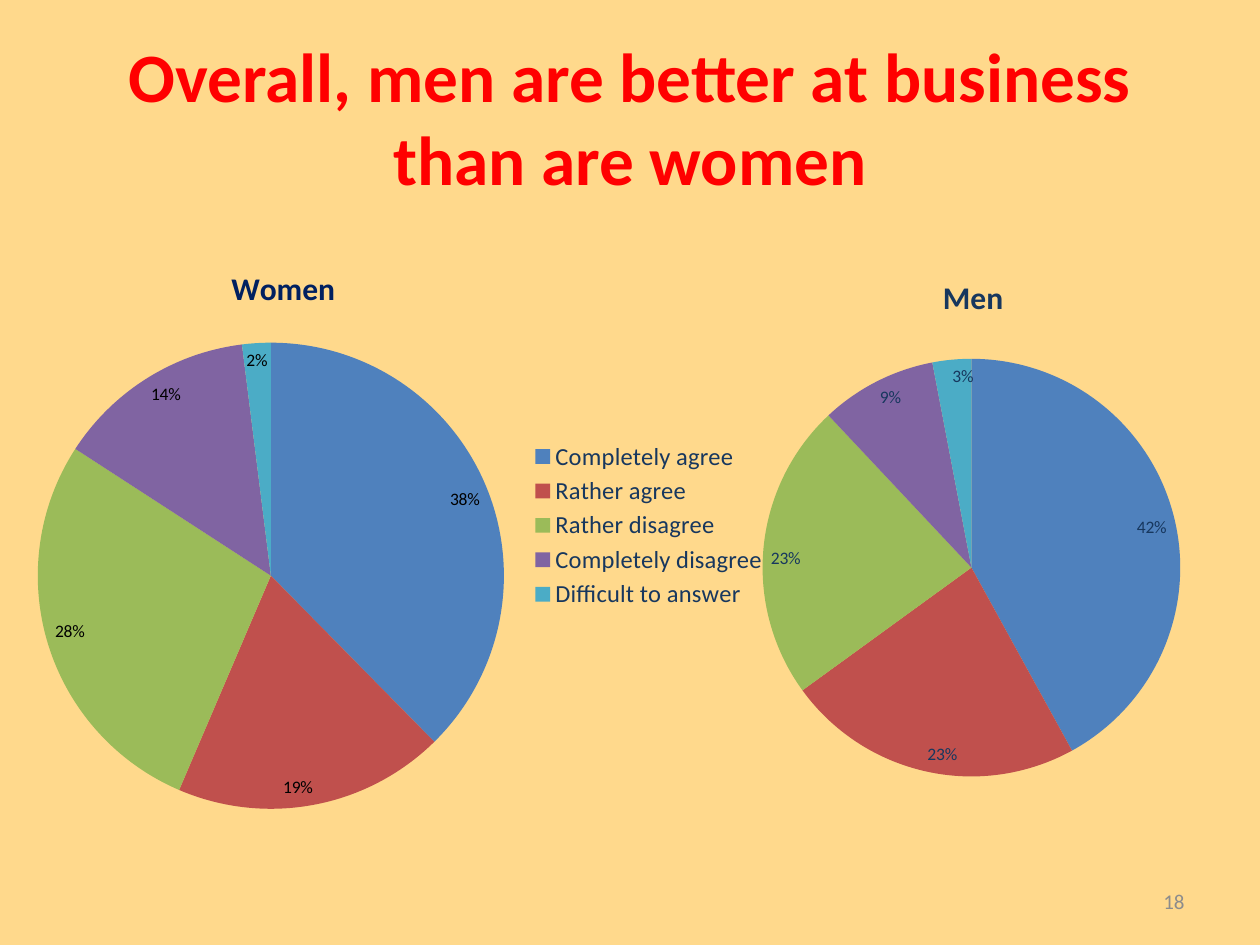
"""Build a slide that compares the answers of women and men in two pie charts."""
from dataclasses import dataclass

from lxml import etree
from pptx import Presentation
from pptx import util as u
from pptx.chart import data as chart_data
from pptx.dml import color
from pptx.enum import chart as kinds, text
from pptx.oxml import ns


@dataclass(frozen=True)
class Theme:
    """Colours, font and type sizes of the slide."""
    font: str = "Calibri"
    background: str = "FFD98C"
    heading: str = "FF0000"
    navy: str = "002060"
    ink: str = "17375E"
    black: str = "000000"
    muted: str = "8C8C8C"
    slices: tuple = ("4F81BD", "C0504D", "9BBB59", "8064A2", "4BACC6")
    heading_size: float = 39.6
    chart_title_size: int = 18
    legend_size: int = 14
    number_size: int = 12
    label_size: int = 10


THEME = Theme()
ANSWERS = ["Completely agree", "Rather agree", "Rather disagree",
           "Completely disagree", "Difficult to answer"]
PIES = [
    {"name": "Women", "place": (0.17, 1.67, 6, 5), "answers": ANSWERS,
     "values": (0.38, 0.19, 0.28, 0.14, 0.02),
     "title_color": THEME.navy, "label_color": THEME.black,
     "title_at": {"x": 0.27, "y": 0.08},
     "plot_at": {"x": 0.02, "y": 0.21, "w": 0.62, "h": 0.74},
     "legend_at": {"x": 0.67, "y": 0.36, "w": 0.32, "h": 0.28}},
    {"name": "Men", "place": (5, 1.92, 5.42, 4.42), "answers": list("12345"),
     "values": (0.42, 0.23, 0.23, 0.09, 0.03),
     "title_color": THEME.ink, "label_color": THEME.ink,
     "title_at": {"x": 0.45, "y": 0.05},
     "plot_at": {"x": 0.19, "y": 0.21, "w": 0.62, "h": 0.75}},
]


def inches(values):
    """Turn numbers into lengths."""
    return [u.Inches(value) for value in values]


def format_font(font, size, fill, bold=False):
    """Set the face, size, weight and colour of a font."""
    values = {"name": THEME.font, "size": u.Pt(size), "bold": bold}
    for name, value in values.items():
        setattr(font, name, value)
    font.color.rgb = color.RGBColor.from_string(fill)


def write_text(box, wording, align, size, fill, bold=False):
    """Fill a box with one formatted paragraph."""
    frame = box.text_frame
    values = {"word_wrap": True, "auto_size": text.MSO_AUTO_SIZE.NONE,
              "vertical_anchor": text.MSO_ANCHOR.MIDDLE}
    for name, value in values.items():
        setattr(frame, name, value)
    para = frame.paragraphs[0]
    para.alignment = align
    span = para.add_run()
    span.text = wording
    format_font(span.font, size, fill, bold)


def place_part(part, index, fractions, inner=False):
    """Give a chart part a manual layout in fractions of the chart."""
    for old in part.findall(ns.qn("c:layout")):
        part.remove(old)
    layout = etree.Element(ns.qn("c:layout"))
    manual = etree.SubElement(layout, ns.qn("c:manualLayout"))
    settings = [("layoutTarget", "inner")] if inner else []
    settings += [("xMode", "edge"), ("yMode", "edge"), *fractions.items()]
    for name, value in settings:
        etree.SubElement(manual, ns.qn(f"c:{name}")).set("val", str(value))
    part.insert(index, layout)


def add_chart_title(chart, pie):
    """Add the bold title of a pie."""
    chart.has_title = True
    para = chart.chart_title.text_frame.paragraphs[0]
    span = para.add_run()
    span.text = pie["name"]
    format_font(span.font, THEME.chart_title_size, pie["title_color"], True)
    place_part(chart.chart_title._element, 1, pie["title_at"])


def add_legend(chart, fractions):
    """Add the legend on the right of a pie."""
    chart.has_legend = True
    legend = chart.legend
    legend.position = kinds.XL_LEGEND_POSITION.RIGHT
    legend.include_in_layout = False
    format_font(legend.font, THEME.legend_size, THEME.ink)
    place_part(legend._element, 1, fractions)


def add_pie(page, pie):
    """Add a pie chart with coloured slices and percent labels."""
    source = chart_data.CategoryChartData(number_format="0%")
    source.categories = pie["answers"]
    source.add_series(pie["name"], pie["values"])
    chart = page.shapes.add_chart(
        kinds.XL_CHART_TYPE.PIE, *inches(pie["place"]), source).chart
    format_font(chart.font, THEME.label_size, pie["label_color"])
    add_chart_title(chart, pie)
    chart.has_legend = False
    if "legend_at" in pie:
        add_legend(chart, pie["legend_at"])
    plot = chart.plots[0]
    plot.vary_by_categories = True
    plot.has_data_labels = True
    labels = plot.data_labels
    values = {"show_value": True, "show_percentage": False,
              "number_format": "0%", "number_format_is_linked": False,
              "position": kinds.XL_LABEL_POSITION.INSIDE_END}
    for name, value in values.items():
        setattr(labels, name, value)
    format_font(labels.font, THEME.label_size, pie["label_color"])
    for index, shade in enumerate(THEME.slices):
        fill = plot.series[0].points[index].format.fill
        fill.solid()
        fill.fore_color.rgb = color.RGBColor.from_string(shade)
    place_part(chart._chartSpace.chart.plotArea, 0, pie["plot_at"], True)


def add_heading(page, wording):
    """Place and fill the title placeholder."""
    box = page.shapes.title
    places = inches((0.5, 0.3, 9, 1.25))
    for name, value in zip(("left", "top", "width", "height"), places):
        setattr(box, name, value)
    write_text(box, wording, text.PP_ALIGN.CENTER,
               THEME.heading_size, THEME.heading, True)


def add_page_number(page, number):
    """Add the page number at the bottom right."""
    box = page.shapes.add_textbox(*inches((7.17, 6.95, 2.33, 0.4)))
    write_text(box, number, text.PP_ALIGN.RIGHT,
               THEME.number_size, THEME.muted)


def main():
    """Build and save the deck."""
    deck = Presentation()
    deck.slide_width, deck.slide_height = inches((10, 7.5))
    page = deck.slides.add_slide(deck.slide_layouts.get_by_name("Title Only"))
    fill = page.background.fill
    fill.solid()
    fill.fore_color.rgb = color.RGBColor.from_string(THEME.background)
    add_heading(page, "Overall, men are better at business than are women")
    for pie in PIES:
        add_pie(page, pie)
    add_page_number(page, "18")
    deck.save("out.pptx")


if __name__ == "__main__":
    main()
